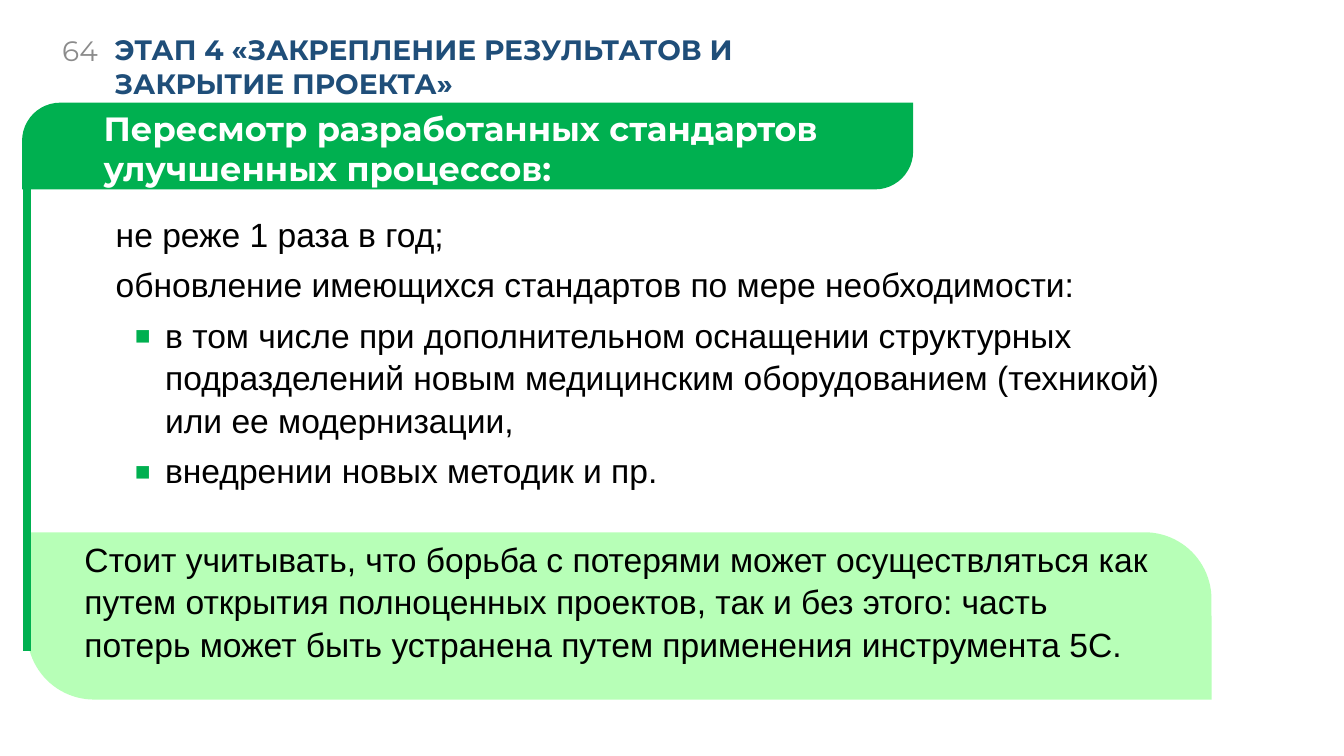
"""Build the slide about revising the standards of improved processes."""
from dataclasses import dataclass

from lxml import etree
from pptx import Presentation
from pptx.dml.color import RGBColor
from pptx.enum.shapes import MSO_CONNECTOR, MSO_SHAPE
from pptx.enum.text import MSO_ANCHOR, PP_ALIGN
from pptx.oxml.ns import qn
from pptx.util import Pt

DIAGONAL = MSO_SHAPE.ROUND_2_DIAG_RECTANGLE
STRAIGHT = MSO_CONNECTOR.STRAIGHT
TOP, MIDDLE = MSO_ANCHOR.TOP, MSO_ANCHOR.MIDDLE
LEFT, RIGHT = PP_ALIGN.LEFT, PP_ALIGN.RIGHT

PAGE_NUMBER = "64"
STAGE = "ЭТАП 4 «ЗАКРЕПЛЕНИЕ РЕЗУЛЬТАТОВ И ЗАКРЫТИЕ ПРОЕКТА»"
HEADING = "Пересмотр разработанных стандартов улучшенных процессов:"
RULES = [
    (0, "не реже 1 раза в год;"),
    (0, "обновление имеющихся стандартов по мере необходимости:"),
    (1, "в том числе при дополнительном оснащении структурных подразделений "
        "новым медицинским оборудованием (техникой) или ее модернизации,"),
    (1, "внедрении новых методик и пр."),
]
NOTE = ("Стоит учитывать, что борьба с потерями может осуществляться как путем "
        "открытия полноценных проектов, так и без этого: часть потерь может быть "
        "устранена путем применения инструмента 5С.")


@dataclass(frozen=True)
class Theme:
    green: str = "00B050"
    pale: str = "B7FFB7"
    navy: str = "1F4E79"
    grey: str = "8B8B8B"
    white: str = "FFFFFF"
    black: str = "000000"
    title_font: str = "Montserrat"
    body_font: str = "Arial"
    small: int = 20
    large: int = 24
    gap: int = 6
    body_spacing: float = 1.05


THEME = Theme()
BODY_LEFT, BODY_WIDTH = 53.3, 782.6
INDENTS = (22.3, 57.6)
HANG = 22.3
RAIL_X = 19.4


def style(para, size, font, color, bold=False):
    para.font.size = Pt(size)
    para.font.name = font
    para.font.bold = bold
    para.font.color.rgb = RGBColor.from_string(color)


def add_panel(page, area, radii, color):
    panel = page.shapes.add_shape(DIAGONAL, *map(Pt, area))
    panel.shadow.inherit = False
    panel.adjustments[0], panel.adjustments[1] = radii
    panel.fill.solid()
    panel.fill.fore_color.rgb = RGBColor.from_string(color)
    panel.line.fill.background()


def add_text(page, area, texts, look, anchor=TOP, align=LEFT, spacing=None):
    box = page.shapes.add_textbox(*map(Pt, area))
    frame = box.text_frame
    frame.word_wrap = True
    frame.vertical_anchor = anchor
    frame.text = "\n".join(texts)
    for para in frame.paragraphs:
        para.alignment = align
        para.line_spacing = spacing
        style(para, *look)
    return frame


def set_indent(para, level):
    props = para._p.get_or_add_pPr()
    props.set("marL", str(Pt(INDENTS[level])))
    if level == 0:
        return
    props.set("indent", str(-Pt(HANG)))
    color = etree.SubElement(props, qn("a:buClr"))
    etree.SubElement(color, qn("a:srgbClr"), val=THEME.green)
    etree.SubElement(props, qn("a:buSzPct"), val="150000")
    etree.SubElement(props, qn("a:buFont"), typeface=THEME.body_font)
    etree.SubElement(props, qn("a:buChar"), char="▪")


def add_rules(page):
    look = (THEME.large, THEME.body_font, THEME.black)
    area = (BODY_LEFT, 147.6, BODY_WIDTH, 215)
    frame = add_text(page, area, [""], look, spacing=THEME.body_spacing)
    for number, (level, text) in enumerate(RULES):
        para = frame.add_paragraph() if number else frame.paragraphs[0]
        para.text = text
        para.line_spacing = THEME.body_spacing
        para.space_before = Pt(THEME.gap if number else 0)
        set_indent(para, level)
        style(para, *look)


def add_rail(page):
    rail = page.shapes.add_connector(
        STRAIGHT, Pt(RAIL_X), Pt(117.4), Pt(RAIL_X), Pt(465.1))
    rail.line.color.rgb = RGBColor.from_string(THEME.green)
    rail.line.width = Pt(6)
    etree.SubElement(rail._element.spPr, qn("a:effectLst"))


def main():
    deck = Presentation()
    deck.slide_width, deck.slide_height = Pt(960), Pt(540)
    page = deck.slides.add_slide(deck.slide_layouts[6])

    add_panel(page, (RAIL_X, 380.2, 846, 119.5), (0, 0.4), THEME.pale)
    add_text(page, (0, 16.6, 77, 38.9), [PAGE_NUMBER],
             (THEME.small, THEME.title_font, THEME.grey), MIDDLE, RIGHT)
    add_text(page, (74.9, 21.6, 465.8, 51.8), [STAGE],
             (THEME.small, THEME.title_font, THEME.navy, True), MIDDLE)
    add_rules(page)
    add_text(page, (BODY_LEFT, 380, BODY_WIDTH, 96), [NOTE],
             (THEME.large, THEME.body_font, THEME.black),
             spacing=THEME.body_spacing)
    add_panel(page, (15.8, 73.4, 636.5, 61.9), (0.44, 0), THEME.green)
    add_text(page, (67, 73.4, 538.6, 65.5), [HEADING],
             (THEME.large, THEME.title_font, THEME.white, True))
    add_rail(page)
    deck.save("out.pptx")


if __name__ == "__main__":
    main()
